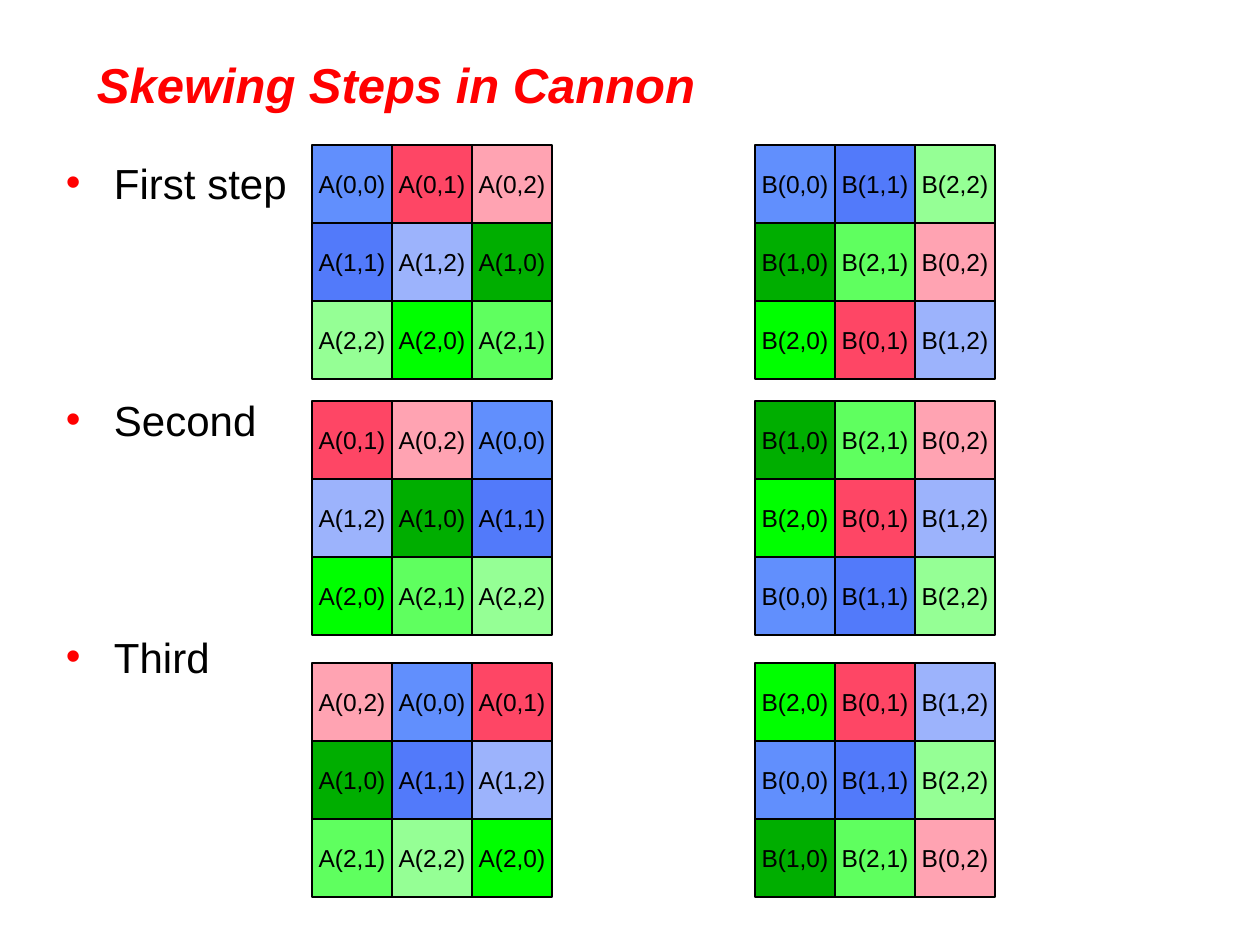
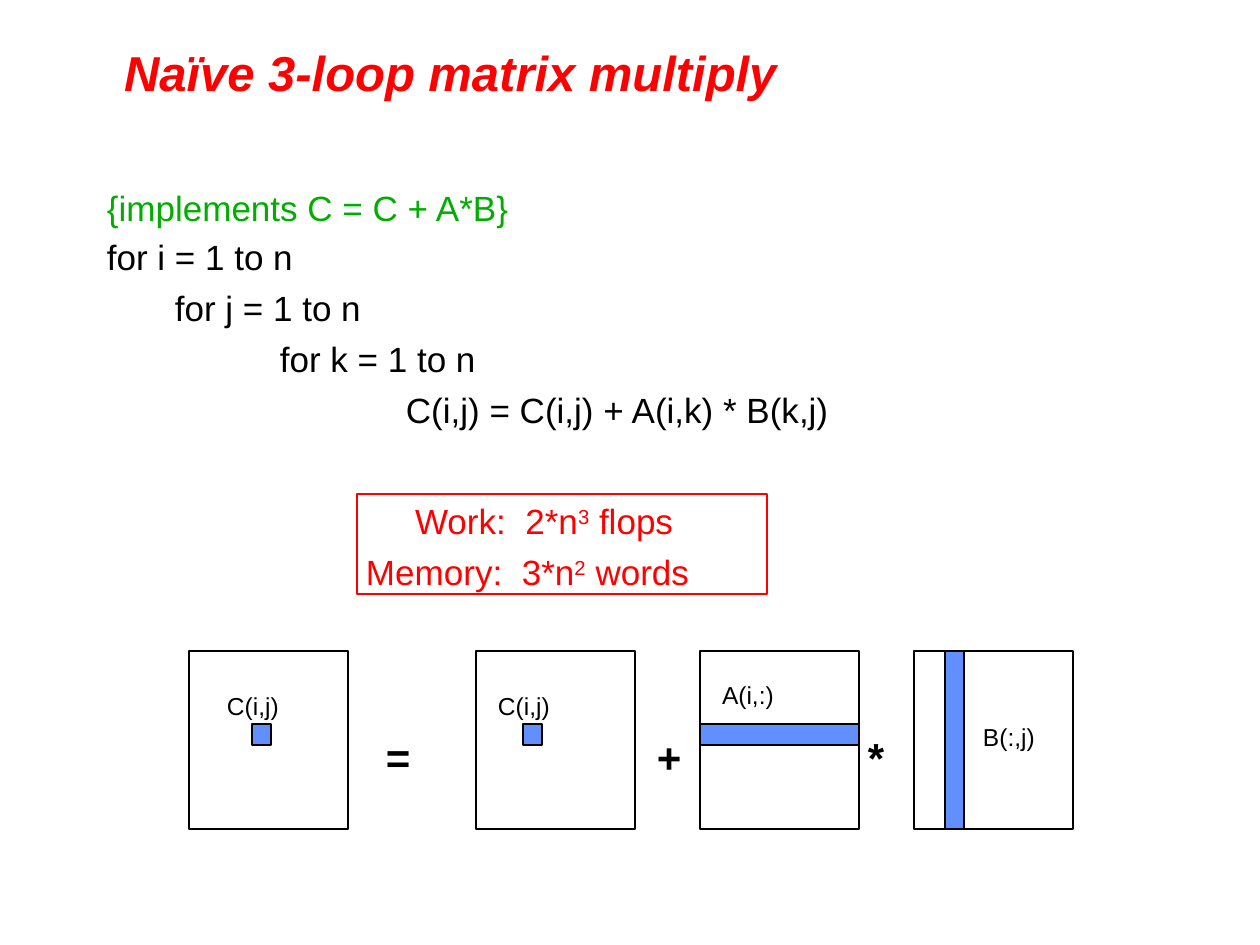
"""Build two slides on Cannon skewing and the naïve matrix multiply."""
import pptx
import pptx.util
import pptx.dml.color
import pptx.enum.shapes
import pptx.enum.text
import lxml.etree

SCALE = 914400 / 126
FONT = "Arial"
HUES = {
    "red": "FF0000", "black": "000000", "green": "00AE00", "blue": "618FFD",
    "00": "618FFD", "01": "FE4665", "02": "FFA3B2",
    "10": "00AE00", "11": "527AFA", "12": "9CB3FC",
    "20": "00FF00", "21": "5FFF5F", "22": "95FF95",
}
ALIGN = pptx.enum.text.PP_ALIGN
ANCHOR = pptx.enum.text.MSO_ANCHOR
CELL_W, CELL_H = 80, 78


def px(size):
    """Turn px into EMU."""
    return pptx.util.Emu(round(size * SCALE))


def hue(name):
    """Look up a colour."""
    return pptx.dml.color.RGBColor.from_string(HUES[name])


def write(shape, lines, size=14, color="black", bold=False, slant=False,
          align=ALIGN.LEFT, anchor=ANCHOR.TOP, wrap=True, inset=(13, 8),
          gap=0, dents=None, mark=None):
    """Fill a shape with lines, each a string or a list of (text, XML attributes)."""
    frame = shape.text_frame
    frame.auto_size = pptx.enum.text.MSO_AUTO_SIZE.NONE
    frame.word_wrap = wrap
    frame.vertical_anchor = anchor
    frame.margin_left = frame.margin_right = px(inset[0])
    frame.margin_top = px(inset[1])
    frame.margin_bottom = px(6)
    for row, line in enumerate(lines):
        para = frame.add_paragraph() if row else frame.paragraphs[0]
        para.alignment = align
        para.space_before = pptx.util.Pt(gap if row else 0)
        if dents:
            para._p.get_or_add_pPr().set("marL", str(px(dents[row])))
        if mark:
            add_mark(para, mark, dents[row])
        for text, extra in [(line, {})] if isinstance(line, str) else line:
            run = para.add_run()
            run.text = text
            run.font.name = FONT
            run.font.size = pptx.util.Pt(size)
            run.font.bold = bold
            run.font.italic = slant
            run.font.color.rgb = hue(color)
            for key, value in extra.items():
                run._r.get_or_add_rPr().set(key, value)


def add_mark(para, color, hang):
    """Give a paragraph a coloured, hanging bullet."""
    props = para._p.get_or_add_pPr()
    props.set("indent", str(-px(hang)))
    space = "{http://schemas.openxmlformats.org/drawingml/2006/main}"
    tint = lxml.etree.SubElement(props, space + "buClr")
    lxml.etree.SubElement(tint, space + "srgbClr", val=HUES[color])
    lxml.etree.SubElement(props, space + "buFont", typeface=FONT)
    lxml.etree.SubElement(props, space + "buChar", char="•")


def add_slide(deck, title, left, top, width, height):
    """Add a slide with its title."""
    slide = deck.slides.add_slide(deck.slide_layouts[5])
    head = slide.shapes.title
    head.left, head.top, head.width, head.height = map(px, (left, top, width, height))
    write(head, [title], size=28, color="red", bold=True, slant=True,
          anchor=ANCHOR.MIDDLE, inset=(13, 6))
    return slide


def add_text(slide, box, lines, **style):
    """Add a text box."""
    write(slide.shapes.add_textbox(*map(px, box)), lines, **style)


def add_box(slide, box, fill=None, line="black", weight=1):
    """Add an outlined rectangle."""
    kind = pptx.enum.shapes.MSO_SHAPE.RECTANGLE
    shape = slide.shapes.add_shape(kind, *map(px, box))
    shape.shadow.inherit = False
    if fill:
        shape.fill.solid()
        shape.fill.fore_color.rgb = hue(fill)
    else:
        shape.fill.background()
    shape.line.color.rgb = hue(line)
    shape.line.width = pptx.util.Pt(weight)
    return shape


def add_grid(slide, name, left, top, step):
    """Draw the 3 by 3 blocks of a skewed matrix at one step."""
    for row in range(3):
        for col in range(3):
            turn = (row + col + step) % 3
            i, j = (row, turn) if name == "A" else (turn, col)
            spot = (left + col * CELL_W, top + row * CELL_H, CELL_W, CELL_H)
            cell = add_box(slide, spot, fill=f"{i}{j}")
            write(cell, [f"{name}({i},{j})"], align=ALIGN.CENTER,
                  anchor=ANCHOR.MIDDLE, wrap=False, inset=(13, 6))


def add_skew(deck):
    """Show the three skewing steps."""
    slide = add_slide(deck, "Skewing Steps in Cannon", 84, 42, 1032, 84)
    add_text(slide, (53, 147, 1102, 561), ["First step", "Second", "Third"],
             size=24, gap=106.7, dents=(48, 48, 48), mark="red", inset=(13, 10))
    for step, top in enumerate((145, 401, 663)):
        add_grid(slide, "A", 312, top, step)
        add_grid(slide, "B", 755, top, step)


def add_loop(deck):
    """Show the triple loop, its cost and the blocks it touches."""
    slide = add_slide(deck, "Naïve 3-loop matrix multiply", 111, 43, 1043, 58)
    add_text(slide, (94, 179, 1124, 60), ["{implements C = C + A*B}"],
             size=20, color="green")
    code = ["for i = 1 to n", "for j = 1 to n", "for k = 1 to n",
            "C(i,j) = C(i,j) + A(i,k) * B(k,j)"]
    add_text(slide, (94, 228, 1124, 210), code, size=20, gap=5,
             dents=(0, 68, 173, 299))

    wide, high = {"spc": "557"}, {"baseline": "30000"}
    cost = add_box(slide, (357, 494, 410, 100), line="red", weight=0.75)
    write(cost, [
        [("Work:", {}), (" ", wide), ("2*n", {}), ("3", high), (" flops", {})],
        [("Memory:", {}), (" ", wide), ("3*n", {}), ("2", high), (" words", {})],
    ], size=20, color="red", gap=5, dents=(49, 0), inset=(9, 6))

    for left in (189, 476, 700, 914):
        add_box(slide, (left, 651, 159, 178))
    for sign, left, width in (("=", 373, 74), ("+", 644, 38), ("*", 858, 23)):
        add_text(slide, (left, 724, width, 63), [sign], size=24, bold=True)
    for part in ((252, 724, 19, 21), (523, 724, 19, 21),
                 (700, 724, 159, 21), (945, 651, 19, 178)):
        add_box(slide, part, fill="blue")
    for name, left, top in (("C(i,j)", 214, 683), ("C(i,j)", 485, 683),
                            ("A(i,:)", 709, 672), ("B(:,j)", 970, 714)):
        add_text(slide, (left, top, 93, 42), [name])


def main():
    """Build and save the deck."""
    deck = pptx.Presentation()
    deck.slide_width, deck.slide_height = px(1260), px(945)
    add_skew(deck)
    add_loop(deck)
    deck.save("out.pptx")


if __name__ == "__main__":
    main()
